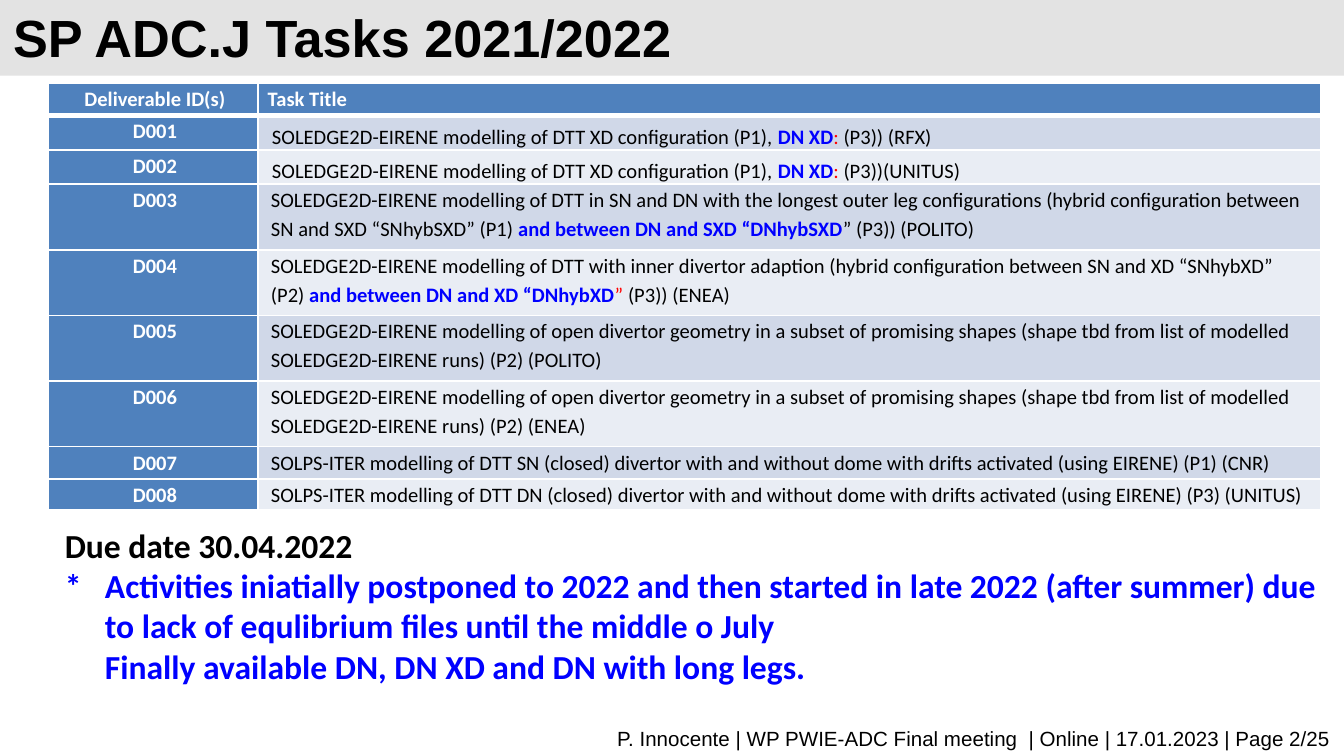
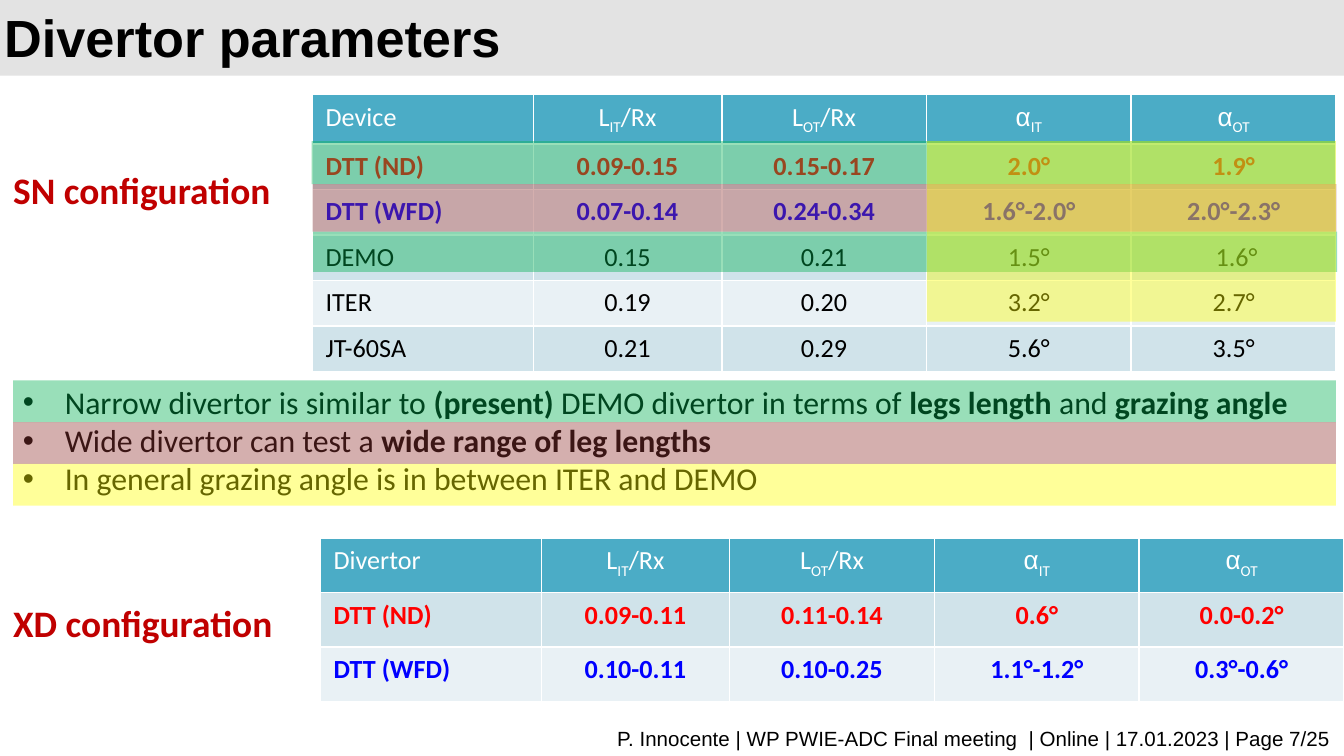
import pptx
import pptx.dml.color
import pptx.enum.shapes
import pptx.enum.text
import pptx.oxml.ns
import pptx.util
from lxml import etree

Cm = pptx.util.Cm
Pt = pptx.util.Pt
qn = pptx.oxml.ns.qn
ALIGN = pptx.enum.text.PP_ALIGN
ANCHOR = pptx.enum.text.MSO_ANCHOR

COLORS = {
    "black": "000000", "white": "FFFFFF", "red": "FF0000", "blue": "0000FF",
    "label": "C00000", "band": "E3E3E3",
    "task_head": "4F81BD", "task_odd": "D0D8E8", "task_even": "E9EDF4",
    "device_head": "4BACC6", "device_odd": "D0E3EA", "device_even": "E9F1F5",
    "green": "00B050", "brown": "953735", "yellow": "FFFF00",
}

# Styles a run can add to its paragraph: (text, style name)
RUN_STYLES = {
    "bold": {"bold": True},
    "blue": {"bold": True, "color": "blue"},
    "red": {"color": "red"},
    "sub": {"baseline": -25000},
    "greek": {"name": "Arial"},
}

FOOTER = "P. Innocente | WP PWIE-ADC Final meeting  | Online | 17.01.2023 | Page {}/25"

XD_TASK = "SOLEDGE2D-EIRENE modelling of DTT XD configuration (P1), "
OPEN_TASK = ("SOLEDGE2D-EIRENE modelling of open divertor geometry in a subset of promising "
             "shapes (shape tbd from list of modelled SOLEDGE2D-EIRENE runs) (P2) ")
DRIFT_TASK = ("SOLPS-ITER modelling of DTT {} (closed) divertor with and without dome "
              "with drifts activated (using EIRENE) {}")
TASKS = [
    [XD_TASK, ("DN XD", "blue"), (":", "red"), " (P3)) (RFX)"],
    [XD_TASK, ("DN XD", "blue"), (":", "red"), " (P3))(UNITUS)"],
    ["SOLEDGE2D-EIRENE modelling of DTT in SN and DN with the longest outer leg configurations "
     "(hybrid configuration between SN and SXD “SNhybSXD” (P1)",
     (" and between DN and SXD “DNhybSXD", "blue"), "” (P3)) (POLITO)"],
    ["SOLEDGE2D-EIRENE modelling of DTT with inner divertor adaption "
     "(hybrid configuration between SN and XD “SNhybXD” (P2)",
     (" and between DN and XD “DNhybXD", "blue"), ("”", "red"), " (P3)) (ENEA)"],
    [OPEN_TASK + "(POLITO)"],
    [OPEN_TASK + "(ENEA)"],
    [DRIFT_TASK.format("SN", "(P1) (CNR)")],
    [DRIFT_TASK.format("DN", "(P3) (UNITUS)")],
]
TASK_COLUMNS = [3.96, 20.09]
TASK_ROWS = [0.61, 0.65, 0.65, 1.24, 1.24, 1.24, 1.24, 0.61, 0.58]

DUE_NOTES = [
    ("Due date 30.04.2022", "black", 0),
    ("*\tActivities iniatially postponed to 2022 and then started in late 2022 (after summer) "
     "due to lack of equlibrium files until the middle o July", "blue", 0.76),
    ("\tFinally available DN, DN XD and DN with long legs.", "blue", 0.76),
]

PARAMETERS = [
    ["L", ("IT", "sub"), "/Rx"],
    ["L", ("OT", "sub"), "/Rx"],
    [("α", "greek"), ("IT", "sub")],
    [("α", "greek"), ("OT", "sub")],
]
PARAMETER_COLUMNS = [4.18, 3.56, 3.87, 3.87, 3.87]
EMPHASIS = {"DTT (ND)": "red", "DTT (WFD)": "blue"}
SN_ROWS = [
    ["DTT (ND)", "0.09-0.15", "0.15-0.17", "2.0°", "1.9°"],
    ["DTT (WFD)", "0.07-0.14", "0.24-0.34", "1.6°-2.0°", "2.0°-2.3°"],
    ["DEMO", "0.15", "0.21", "1.5°", " 1.6°"],
    ["ITER", "0.19", "0.20", "3.2°", "2.7°"],
    ["JT-60SA", "0.21", "0.29", "5.6°", "3.5°"],
]
XD_ROWS = [
    ["DTT (ND)", "0.09-0.11", "0.11-0.14", "0.6°", "0.0-0.2°"],
    ["DTT (WFD)", "0.10-0.11", "0.10-0.25", "1.1°-1.2°", "0.3°-0.6°"],
]
FINDINGS = [
    ["Narrow divertor is similar to ", ("(present)", "bold"), " DEMO divertor in terms of ",
     ("legs length", "bold"), " and ", ("grazing angle", "bold")],
    ["Wide divertor can test a ", ("wide range of leg lengths", "bold")],
    ["In general grazing angle is in between ITER and DEMO"],
]
FINDING_COLORS = ["green", "brown", "yellow"]
TABLE_HIGHLIGHTS = [
    ("green", (5.89, 2.67, 19.35, 0.81)),
    ("green", (5.92, 4.38, 19.35, 0.76)),
    ("brown", (5.91, 3.48, 19.35, 0.9)),
    ("yellow", (17.52, 2.67, 7.73, 3.41)),
]


def rgb(color):
    return pptx.dml.color.RGBColor.from_string(COLORS[color])


def style_font(font, size=None, color=None, bold=None, name=None, baseline=None):
    if size:
        font.size = Pt(size)
    if color:
        font.color.rgb = rgb(color)
    if bold is not None:
        font.bold = bold
    if name:
        font.name = name
    if baseline:
        font._element.set("baseline", str(baseline))


def write(para, runs, size, color="black", bold=False, name="Calibri", align=ALIGN.LEFT):
    """Fill a paragraph with plain strings and (text, style) pairs."""
    para.alignment = align
    style_font(para.font, size, color, bold, name)
    for run in [runs] if isinstance(runs, str) else runs:
        text, style = (run, None) if isinstance(run, str) else run
        span = para.add_run()
        span.text = text
        style_font(span.font, **RUN_STYLES.get(style, {}))


def place(shape, left, top, width, height):
    shape.left, shape.top, shape.width, shape.height = map(Cm, (left, top, width, height))


def hang(para, indent, bullet=None):
    """Give a list paragraph a hanging indent in cm and an optional bullet."""
    props = para._p.get_or_add_pPr()
    props.set("marL", str(Cm(indent)))
    props.set("indent", str(-Cm(indent)))
    if bullet:
        etree.SubElement(props, qn("a:buChar"), char=bullet)
    else:
        etree.SubElement(props, qn("a:buNone"))
    para.space_before = Pt(0)


def add_text(page, area, runs, **style):
    box = page.shapes.add_textbox(*map(Cm, area))
    box.text_frame.word_wrap = True
    write(box.text_frame.paragraphs[0], runs, **style)
    return box


def add_rect(page, area, color, opacity=None):
    rect = page.shapes.add_shape(pptx.enum.shapes.MSO_SHAPE.RECTANGLE, *map(Cm, area))
    rect.shadow.inherit = False
    rect.line.fill.background()
    rect.fill.solid()
    rect.fill.fore_color.rgb = rgb(color)
    if opacity:
        value = rect._element.spPr.find(".//" + qn("a:srgbClr"))
        etree.SubElement(value, qn("a:alpha"), val=str(opacity * 1000))
    return rect


def add_page(deck, title, title_margin, number):
    page = deck.slides.add_slide(deck.slide_layouts[1])
    band = add_rect(page, (0, 0, 25.4, 1.43), "band")
    page.shapes._spTree.insert(2, band._element)
    heading = page.shapes.title
    place(heading, 0, 0.23, 20.96, 0.97)
    frame = heading.text_frame
    frame.margin_left = Cm(title_margin)
    frame.auto_size = pptx.enum.text.MSO_AUTO_SIZE.NONE
    frame.vertical_anchor = ANCHOR.MIDDLE
    frame.paragraphs[0].line_spacing = Pt(32)
    write(frame.paragraphs[0], title, 28, bold=True, name="Arial")
    footer = add_text(page, (0, 13.64, 25.4, 0.65), FOOTER.format(number),
                      size=11, name="Arial", align=ALIGN.RIGHT)
    footer.text_frame.vertical_anchor = ANCHOR.MIDDLE
    return page


def list_paragraphs(page, area, count):
    """Move the body placeholder and return that many paragraphs of it."""
    body = page.placeholders[1]
    place(body, *area)
    frame = body.text_frame
    frame.auto_size = pptx.enum.text.MSO_AUTO_SIZE.NONE
    return [frame.paragraphs[0]] + [frame.add_paragraph() for _ in range(count - 1)]


def fill_cell(cell, color):
    cell.fill.solid()
    cell.fill.fore_color.rgb = rgb(color)


def add_grid(page, left, top, columns, rows, palette, head_rule):
    """Add an empty table with white rules, a header fill and banded rows."""
    area = map(Cm, (left, top, sum(columns), sum(rows)))
    table = page.shapes.add_table(len(rows), len(columns), *area).table
    for column, width in zip(table.columns, columns):
        column.width = Cm(width)
    for r, height in enumerate(rows):
        table.rows[r].height = Cm(height)
        band = "head" if r == 0 else "odd" if r % 2 else "even"
        for cell in table.rows[r].cells:
            props = cell._tc.get_or_add_tcPr()
            for side in "LRTB":
                under_head = (r, side) in [(0, "B"), (1, "T")]
                width = Pt(head_rule if under_head else 1)
                line = etree.SubElement(props, qn("a:ln" + side), w=str(width))
                fill = etree.SubElement(line, qn("a:solidFill"))
                etree.SubElement(fill, qn("a:srgbClr"), val=COLORS["white"])
            fill_cell(cell, f"{palette}_{band}")
    return table


def add_task_table(page):
    table = add_grid(page, 0.92, 1.57, TASK_COLUMNS, TASK_ROWS, "task", 3)
    rows = [("Deliverable ID(s)", "Task Title")]
    rows += [(f"D{n:03}", task) for n, task in enumerate(TASKS, 1)]
    for r, row in enumerate(rows):
        fill_cell(table.cell(r, 0), "task_head")
        for c, runs in enumerate(row):
            cell = table.cell(r, c)
            cell.margin_left = cell.margin_right = Cm(0.18)
            cell.margin_top = cell.margin_bottom = 0
            para = cell.text_frame.paragraphs[0]
            para.line_spacing = 1.15
            para.space_after = Pt(3 if r or not c else 2.4)
            if (r, c) != (0, 1):
                para._p.get_or_add_pPr().set("marL", str(Cm(0.06)))
            heading = r == 0 or c == 0
            write(para, runs, 11, "white" if heading else "black", heading,
                  align=ALIGN.LEFT if c else ALIGN.CENTER)
    for r in (1, 2):
        cell = table.cell(r, 1)
        cell.vertical_anchor = ANCHOR.BOTTOM
        cell.margin_left, cell.margin_top, cell.margin_right = Cm(0.2), Cm(0.03), Cm(0.03)


def add_parameter_table(page, left, top, row_height, first_head, rows):
    grid = [[first_head] + PARAMETERS] + rows
    heights = [row_height] * len(grid)
    table = add_grid(page, left, top, PARAMETER_COLUMNS, heights, "device", 1)
    for r, row in enumerate(grid):
        emphasis = EMPHASIS.get(row[0])
        color = emphasis or ("black" if r else "white")
        for c, runs in enumerate(row):
            write(table.cell(r, c).text_frame.paragraphs[0], runs, 14, color, bool(emphasis),
                  align=ALIGN.CENTER if c else ALIGN.LEFT)


def build_tasks(deck):
    page = add_page(deck, "SP ADC.J Tasks 2021/2022", 0.25, 2)
    add_task_table(page)
    paras = list_paragraphs(page, (0.97, 9.79, 24.18, 3.33), len(DUE_NOTES))
    for para, (text, color, indent) in zip(paras, DUE_NOTES):
        hang(para, indent)
        write(para, text, 18, color, True)


def build_parameters(deck):
    page = add_page(deck, "Divertor parameters", 0.08, 7)
    add_parameter_table(page, 5.9, 1.79, 0.86, "Device", SN_ROWS)
    add_parameter_table(page, 6.05, 10.17, 1.03, "Divertor", XD_ROWS)
    for text, top in [("SN configuration", 3.03), ("XD configuration", 11.22)]:
        add_text(page, (0, top, 6, 1.12), text, size=20, color="label", bold=True)
    paras = list_paragraphs(page, (0.18, 7.11, 25.22, 2.44), len(FINDINGS))
    for n, (para, runs) in enumerate(zip(paras, FINDINGS)):
        hang(para, 0.79, "•")
        write(para, runs, 17)
        add_rect(page, (0.25, 7.19 + 0.79 * n, 25, 0.79), FINDING_COLORS[n], 40)
    for color, area in TABLE_HIGHLIGHTS:
        add_rect(page, area, color, 40)


def main():
    deck = pptx.Presentation()
    deck.slide_width, deck.slide_height = Cm(25.4), Cm(14.29)
    build_tasks(deck)
    build_parameters(deck)
    deck.save("out.pptx")


if __name__ == "__main__":
    main()
